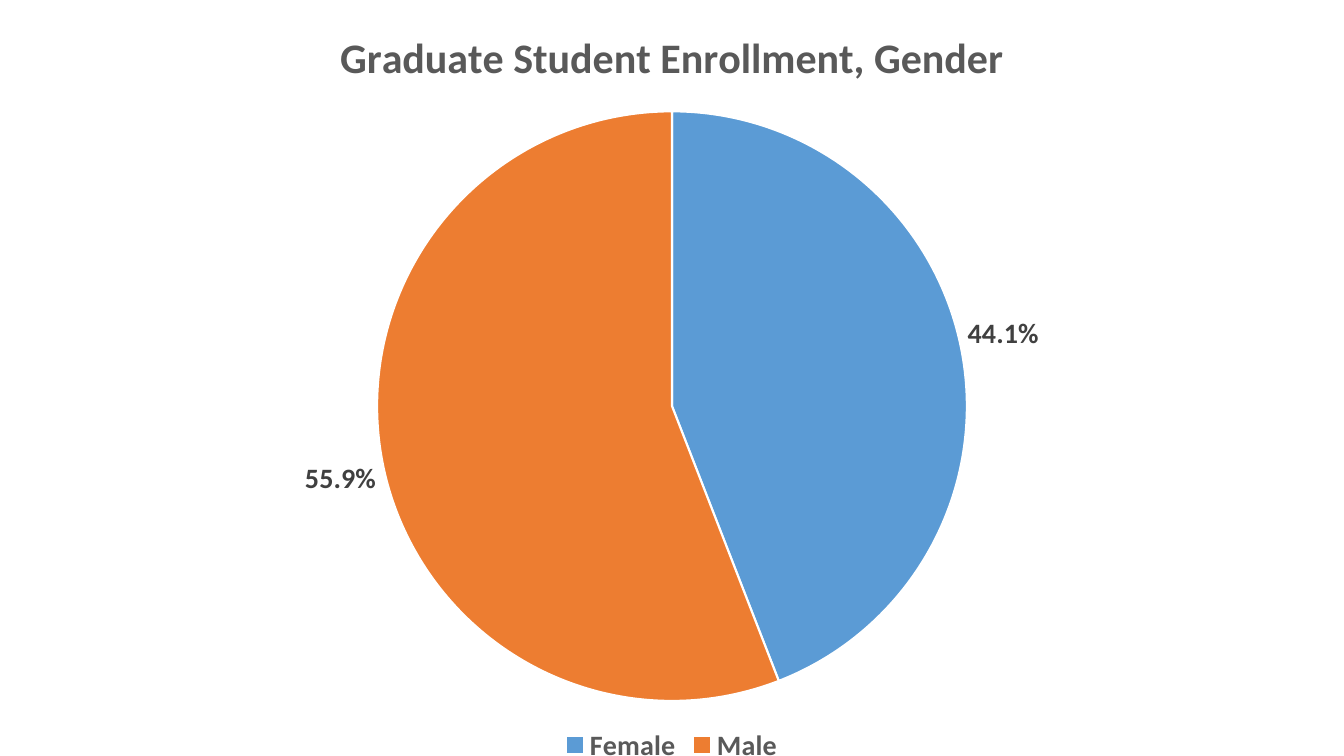
from pptx import Presentation
from pptx.chart.data import CategoryChartData
from pptx.dml.color import RGBColor
from pptx.enum.chart import XL_CHART_TYPE, XL_LABEL_POSITION, XL_LEGEND_POSITION
from pptx.util import Inches, Pt

PIE = XL_CHART_TYPE.PIE
OUTER = XL_LABEL_POSITION.OUTSIDE_END
BOTTOM = XL_LEGEND_POSITION.BOTTOM

BLUE = RGBColor(0x5B, 0x9B, 0xD5)
ORANGE = RGBColor(0xED, 0x7D, 0x31)
WHITE = RGBColor(0xFF, 0xFF, 0xFF)
GRAY = RGBColor(0x59, 0x59, 0x59)
DARK = RGBColor(0x40, 0x40, 0x40)


def style(font, size=20, color=GRAY, bold=True, name="Calibri"):
    font.size = Pt(size)
    font.color.rgb = color
    font.bold = bold
    font.name = name


def write(frame, text, **look):
    frame.text = text
    style(frame.paragraphs[0].runs[0].font, **look)


class Deck:
    """Holds the current slide and draws its elements in one style."""

    def __init__(self, width, height):
        self.show = Presentation()
        self.show.slide_width = Inches(width)
        self.show.slide_height = Inches(height)
        self.slide = self.show.slides.add_slide(self.show.slide_layouts[6])

    def pie(self, title, shares, colors, left, top, width, height):
        data = CategoryChartData(number_format="0.0%")
        data.categories = list(shares)
        data.add_series("Series 1", list(shares.values()))
        box = [Inches(size) for size in (left, top, width, height)]
        chart = self.slide.shapes.add_chart(PIE, *box, data).chart
        style(chart.font)
        chart.has_title = True
        write(chart.chart_title.text_frame, title, size=30)
        chart.chart_title.include_in_layout = False

        chart.has_legend = True
        chart.legend.position = BOTTOM
        chart.legend.include_in_layout = False
        style(chart.legend.font)

        plot = chart.plots[0]
        plot.vary_by_categories = True
        for index, color in enumerate(colors):
            form = plot.series[0].points[index].format
            form.fill.solid()
            form.fill.fore_color.rgb = color
            form.line.color.rgb = WHITE
            form.line.width = Pt(1.5)

        labels = plot.series[0].data_labels
        labels.show_value = True
        labels.number_format = "0.0%"
        labels.number_format_is_linked = False
        labels.position = OUTER
        style(labels.font, color=DARK)

    def save(self):
        self.show.save("out.pptx")


def main():
    deck = Deck(13.33, 7.5)
    deck.pie("Graduate Student Enrollment, Gender",
             {"Female": 0.441, "Male": 0.559}, (BLUE, ORANGE),
             0, 0, 13.33, 7.62)
    deck.save()


if __name__ == "__main__":
    main()
